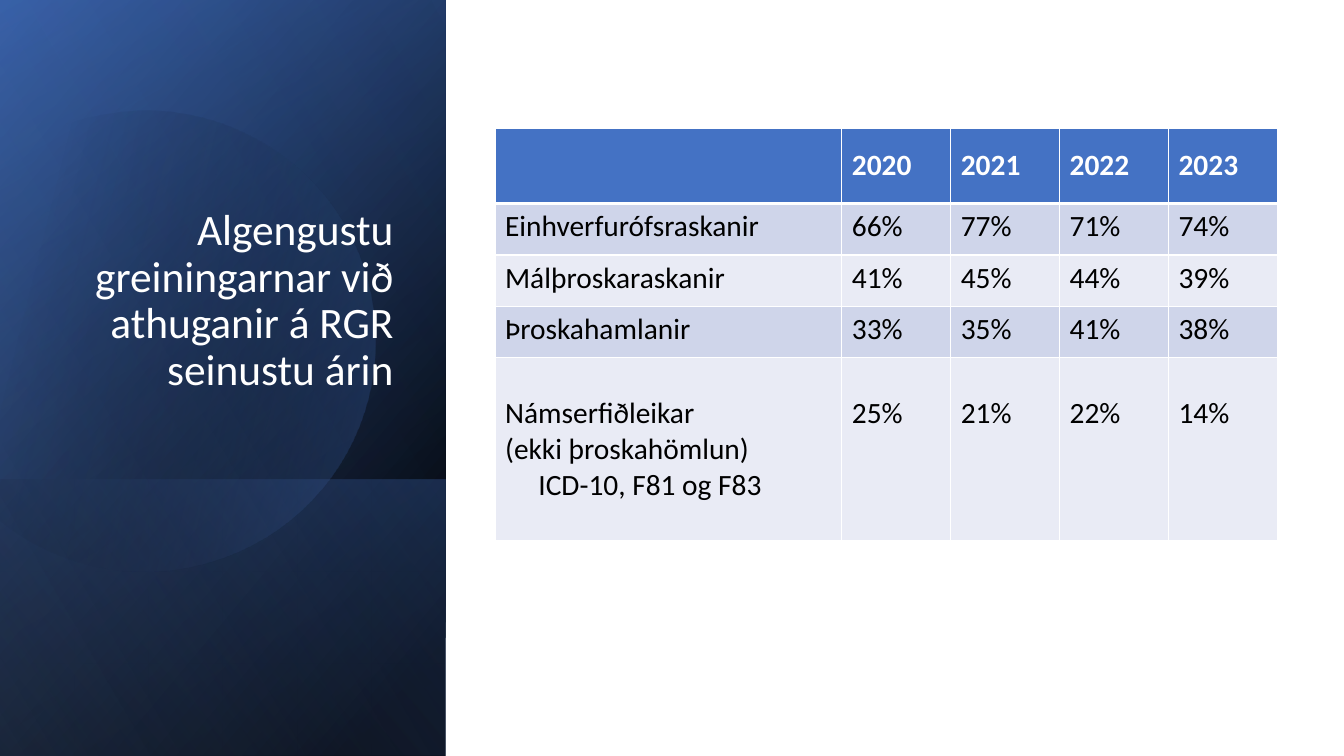
from math import cos, radians, sin

from lxml.etree import SubElement
from pptx import Presentation
from pptx.dml.color import RGBColor
from pptx.enum.shapes import MSO_SHAPE as Preset
from pptx.enum.text import MSO_ANCHOR as Anchor, PP_ALIGN as Align
from pptx.oxml import parse_xml
from pptx.oxml.ns import nsdecls, qn
from pptx.util import Inches, Pt

COLORS = {
    "black": "000000", "white": "FFFFFF", "navy": "2F5597", "blue": "4472C4",
    "sky": "8FAADC", "band": "CFD5EA", "pale": "E9EBF5",
}
FONT = "Calibri"
PANEL = (0, 0, 4.42, 7.5)
TITLE = (0.59, 1.35, 3.41, 2.62)
TABLE = (4.91, 1.27, 7.75, 4.14)

# Disc outline in page coordinates: cubic curves, then the straight cut side
DISC_BOX = (-0.55, 1.06, 4.27, 4.57)
DISC_TURN = 343.9
DISC_START = (1.49, 1.1)
DISC_CURVES = [
    ((2.46, 1.12), (3.35, 1.77), (3.63, 2.75)),
    ((3.98, 3.97), (3.28, 5.23), (2.07, 5.58)),
    ((1.31, 5.8), (0.53, 5.61), (-0.03, 5.14)),
    ((-0.15, 5.03), (-0.15, 5.03), (-0.15, 5.03)),
    ((-0.15, 1.75), (-0.15, 1.75), (-0.15, 1.75)),
    ((0, 1.61), (0, 1.61), (0, 1.61)),
    ((0.23, 1.42), (0.5, 1.28), (0.8, 1.19)),
    ((1.03, 1.13), (1.26, 1.1), (1.49, 1.1)),
]

YEARS = ["", "2020", "2021", "2022", "2023"]
DIAGNOSES = [
    (["Einhverfurófsraskanir"], "66%", "77%", "71%", "74%"),
    (["Málþroskaraskanir"], "41%", "45%", "44%", "39%"),
    (["Þroskahamlanir"], "33%", "35%", "41%", "38%"),
    (["Námserfiðleikar", "(ekki þroskahömlun)", "ICD-10, F81 og F83"],
     "25%", "21%", "22%", "14%"),
]


def rgb(name):
    return RGBColor.from_string(COLORS[name])


def add_span(para, text, size, color, bold=False):
    span = para.add_run()
    span.text = text
    span.font.name, span.font.size, span.font.bold = FONT, Pt(size), bold
    span.font.color.rgb = rgb(color)


def paint_gradient(shape, stops, angle):
    """Stops are (position %, colour, opacity %); the angle runs clockwise."""
    marks = "".join(
        f'<a:gs pos="{place * 1000}"><a:srgbClr val="{COLORS[color]}">'
        f'<a:alpha val="{opacity * 1000}"/></a:srgbClr></a:gs>'
        for place, color, opacity in stops)
    fill = parse_xml(
        f'<a:gradFill {nsdecls("a")} rotWithShape="1"><a:gsLst>{marks}</a:gsLst>'
        f'<a:lin ang="{angle * 60000}" scaled="0"/></a:gradFill>')
    shape.line.fill.background()
    shape.shadow.inherit = False
    shape.fill.background()
    blank = shape.fill._xPr.find(qn("a:noFill"))
    blank.getparent().replace(blank, fill)


def add_turned_layer(page, box, stops, angle):
    """A mirrored rectangle, turned a quarter so that it covers the box."""
    left, top, width, height = box
    shift = (height - width) / 2
    layer = page.shapes.add_shape(
        Preset.RECTANGLE, Inches(left - shift), Inches(top + shift),
        Inches(height), Inches(width))
    layer.rotation = 90
    layer._element.spPr.find(qn("a:xfrm")).set("flipH", "1")
    paint_gradient(layer, stops, angle)


def curve_points(start, curves, steps=24):
    for first, second, end in curves:
        count = 1 if first == end else steps
        for step in range(1, count + 1):
            t = step / count
            weights = ((1 - t) ** 3, 3 * t * (1 - t) ** 2, 3 * t * t * (1 - t), t ** 3)
            knots = (start, first, second, end)
            yield tuple(sum(w * knot[axis] for w, knot in zip(weights, knots))
                        for axis in (0, 1))
        start = end


def add_disc(page, box):
    left, top, width, height = box
    center_x, center_y = left + width / 2, top + height / 2
    turn = radians(-DISC_TURN)

    def level(point):
        x, y = point[0] - center_x, point[1] - center_y
        return (Inches(center_x + x * cos(turn) - y * sin(turn)),
                Inches(center_y + x * sin(turn) + y * cos(turn)))

    outline = page.shapes.build_freeform(*level(DISC_START))
    outline.add_line_segments(
        [level(point) for point in curve_points(DISC_START, DISC_CURVES)], close=True)
    disc = outline.convert_to_shape()
    disc.rotation = DISC_TURN
    paint_gradient(disc, [(29, "black", 0), (100, "blue", 43)], 30)


def add_panel(page, box):
    left, top, width, height = box
    foot = 2.74
    add_turned_layer(page, box, [(8, "black", 100), (100, "navy", 100)], 50)
    add_turned_layer(page, box, [(0, "black", 0), (99, "blue", 46)], 30)
    add_turned_layer(page, (left, top + height - foot, width, foot),
                     [(2, "blue", 29), (100, "black", 30)], 130)
    add_disc(page, DISC_BOX)
    add_turned_layer(page, box, [(0, "black", 0), (99, "sky", 11)], 120)


def add_title(page, box):
    frame = page.shapes.add_textbox(*map(Inches, box)).text_frame
    frame.word_wrap = True
    frame.vertical_anchor = Anchor.BOTTOM
    para = frame.paragraphs[0]
    para.alignment, para.line_spacing = Align.RIGHT, 0.9
    add_span(para, "Algengustu greiningarnar við athuganir á RGR seinustu árin", 31, "white")


def style_cell(cell, fill, top=1, bottom=1):
    cell.fill.solid()
    cell.fill.fore_color.rgb = rgb(fill)
    props = cell._tc.get_or_add_tcPr()
    for place, (side, weight) in enumerate(
            [("lnL", 1), ("lnR", 1), ("lnT", top), ("lnB", bottom)]):
        line = SubElement(props, qn(f"a:{side}"), w=str(Pt(weight)))
        SubElement(SubElement(line, qn("a:solidFill")), qn("a:srgbClr"), val=COLORS["white"])
        props.insert(place, line)


def add_diagnosis_table(page, box):
    table = page.shapes.add_table(
        len(DIAGNOSES) + 1, len(YEARS), *map(Inches, box)).table
    for column, width in zip(table.columns, [3.44] + [1.08] * 4):
        column.width = Inches(width)
    for row, height in zip(table.rows, [0.75] + [0.51] * 3 + [1.81]):
        row.height = Inches(height)

    # Header row
    for col, year in enumerate(YEARS):
        cell = table.cell(0, col)
        style_cell(cell, "blue", bottom=3)
        cell.vertical_anchor = Anchor.MIDDLE
        if year:
            add_span(cell.text_frame.paragraphs[0], year, 21, "white", bold=True)

    # Banded rows; the tall row starts all its texts on one line
    for row, (names, *shares) in enumerate(DIAGNOSES, 1):
        for col, lines in enumerate([names] + [[share] for share in shares]):
            cell = table.cell(row, col)
            style_cell(cell, "band" if row % 2 else "pale", top=3 if row == 1 else 1)
            if len(names) > 1:
                cell.margin_top = Inches(0.37)
            frame = cell.text_frame
            for index, text in enumerate(lines):
                para = frame.paragraphs[0] if index == 0 else frame.add_paragraph()
                if index == 2:
                    para._p.get_or_add_pPr().set("marL", str(Inches(0.33)))
                add_span(para, text, 21, "black")


def main():
    deck = Presentation()
    deck.slide_width, deck.slide_height = Inches(13.33), Inches(7.5)
    page = deck.slides.add_slide(deck.slide_layouts[6])
    add_panel(page, PANEL)
    add_title(page, TITLE)
    add_diagnosis_table(page, TABLE)
    deck.save("out.pptx")


if __name__ == "__main__":
    main()
